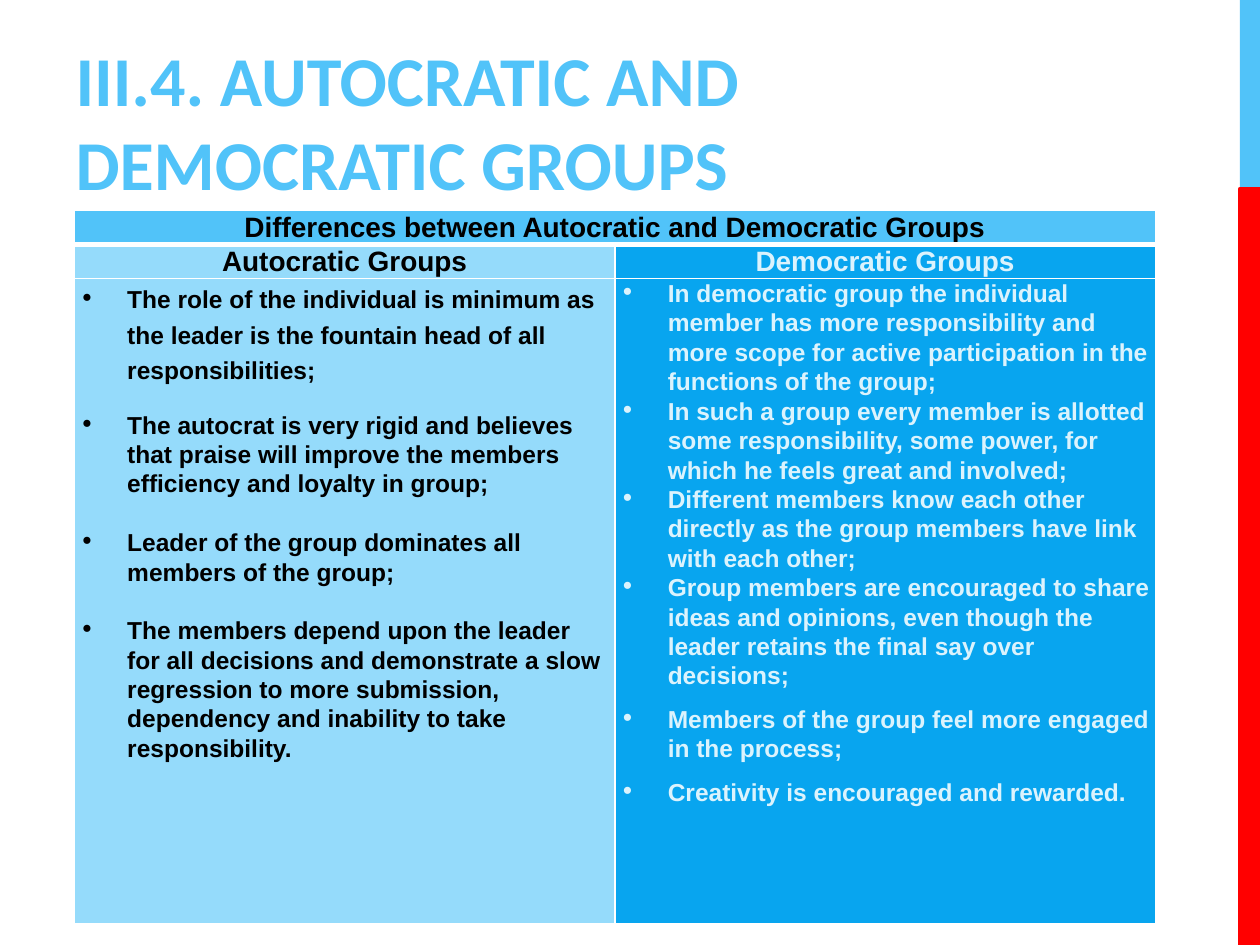
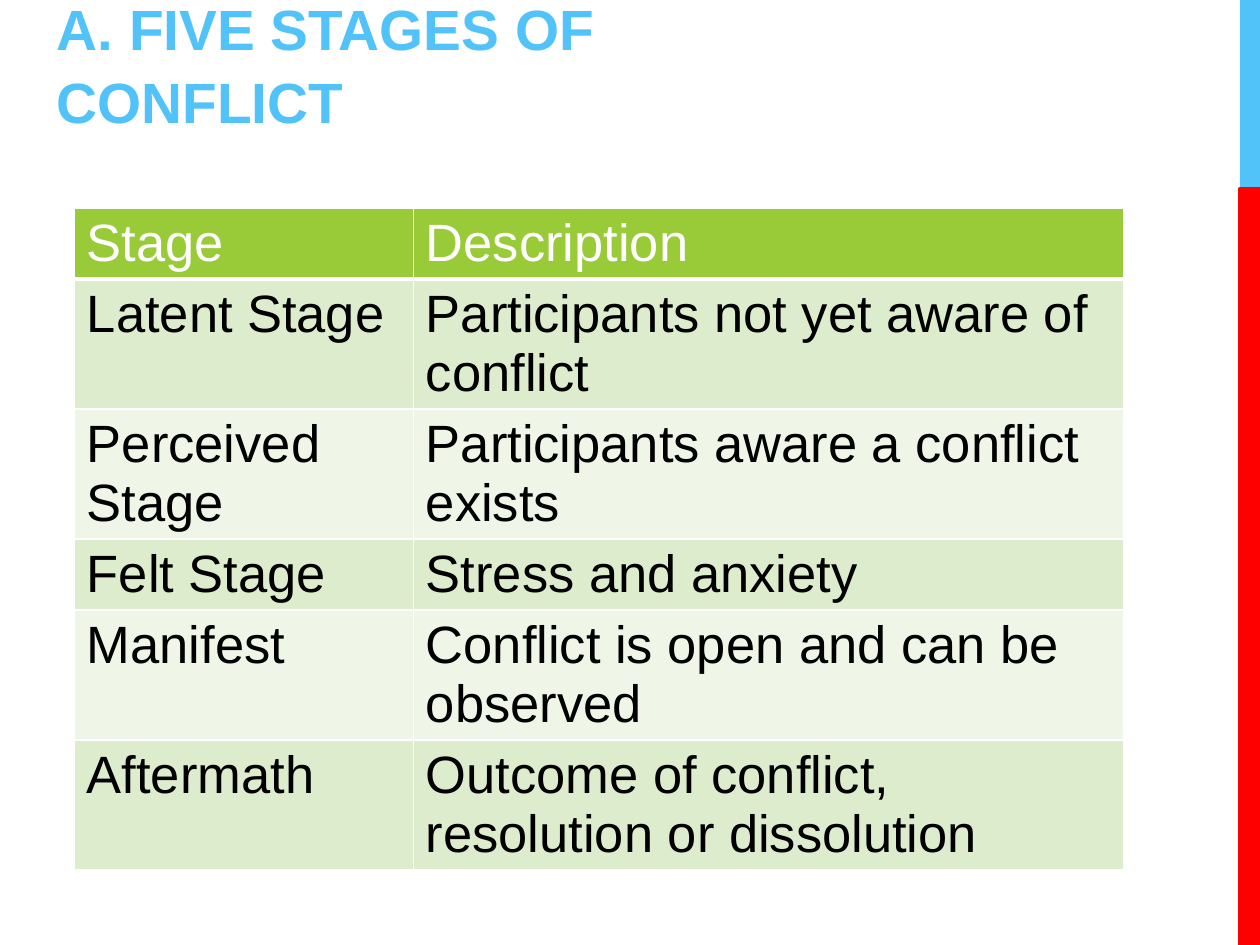
from dataclasses import dataclass

from lxml import etree
from pptx import Presentation
from pptx.dml.color import RGBColor
from pptx.enum.shapes import MSO_SHAPE
from pptx.enum.text import MSO_ANCHOR, MSO_AUTO_SIZE, PP_ALIGN
from pptx.oxml.ns import qn
from pptx.util import Inches, Pt

RECT = MSO_SHAPE.RECTANGLE
BOTTOM, TOP = MSO_ANCHOR.BOTTOM, MSO_ANCHOR.TOP
NO_FIT = MSO_AUTO_SIZE.NONE
LEFT, CENTER = PP_ALIGN.LEFT, PP_ALIGN.CENTER
TITLE_ONLY = 5


@dataclass(frozen=True)
class Theme:
    sky: str = "51C3F9"
    red: str = "FF0000"
    white: str = "FFFFFF"
    black: str = "000000"
    pale: str = "95DBFB"
    deep: str = "08A5EF"
    ice: str = "DBF3FD"
    green: str = "99CB38"
    bands: tuple = ("DDECCC", "EFF6E7")
    head: str = "Calibri"
    body: str = "Arial"
    big: float = 40
    mid: float = 32.4
    grid: float = 30
    label: float = 16
    point: float = 14
    tight: float = 1.07
    loose: float = 1.29
    thin: float = 1
    thick: float = 3


T = Theme()

# Each point: text, space before, line spacing
AUTO = [
    ("The role of the individual is minimum as the leader is the fountain "
     "head of all responsibilities;", 0, T.loose),
    ("The autocrat is very rigid and believes that praise will improve the "
     "members efficiency and loyalty in group;", 14.4, T.tight),
    ("Leader of the group dominates all members of the group;",
     16.7, T.tight),
    ("The members depend upon the leader for all decisions and demonstrate "
     "a slow regression to more submission, dependency and inability to "
     "take responsibility.", 16.7, T.tight),
]
DEMO = [
    ("In democratic group the individual member has more responsibility and "
     "more scope for active participation in the functions of the group;",
     0, T.tight),
    ("In such a group every member is allotted some responsibility, some "
     "power, for which he feels great and involved;", 0, T.tight),
    ("Different members know each other directly as the group members have "
     "link with each other;", 0, T.tight),
    ("Group members are encouraged to share ideas and opinions, even though "
     "the leader retains the final say over decisions;", 0, T.tight),
    ("Members of the group feel more engaged in the process;", 8, T.tight),
    ("Creativity is encouraged and rewarded.", 8, T.tight),
]
STAGES = [
    ("Stage", "Description"),
    ("Latent Stage", "Participants not yet aware of conflict"),
    ("Perceived Stage", "Participants aware a conflict exists"),
    ("Felt Stage", "Stress and anxiety"),
    ("Manifest", "Conflict is open and can be observed"),
    ("Aftermath", "Outcome of conflict, resolution or dissolution"),
]


def rgb(code):
    return RGBColor.from_string(code)


def write(par, text, size, color=T.black, font=T.body, bold=True,
          align=LEFT, lines=1.0, before=0):
    par.alignment = align
    par.line_spacing = lines
    par.space_before = Pt(before)
    run = par.add_run()
    run.text = text
    run.font.name = font
    run.font.size = Pt(size)
    run.font.bold = bold
    run.font.color.rgb = rgb(color)


def bullet(par, color):
    props = par._p.get_or_add_pPr()
    props.set("marL", str(Inches(0.38)))
    props.set("indent", str(-Inches(0.38)))
    tint = etree.SubElement(props, qn("a:buClr"))
    etree.SubElement(tint, qn("a:srgbClr"), val=color)
    etree.SubElement(props, qn("a:buChar"), char="∙")


def add_title(slide, text, box, size, font, lines=1.0):
    title = slide.shapes.title
    title.left, title.top, title.width, title.height = map(Inches, box)
    frame = title.text_frame
    frame.auto_size = NO_FIT
    frame.word_wrap = True
    frame.vertical_anchor = BOTTOM
    write(frame.paragraphs[0], text, size, T.sky, font, lines=lines)


def add_bands(slide):
    """Draw the two-colour strip down the right edge."""
    for top, height, color in ((0, 1.5, T.sky), (1.5, 6, T.red)):
        band = slide.shapes.add_shape(
            RECT, Inches(9.84), Inches(top), Inches(0.16), Inches(height))
        band.shadow.inherit = False
        band.fill.solid()
        band.fill.fore_color.rgb = rgb(color)
        if color == T.red:
            band.line.color.rgb = rgb(color)
            band.line.width = Pt(2.25)
        else:
            band.line.fill.background()


def add_grid(slide, left, top, cols, rows, pad):
    """Add a plain table with white rules, the one under row 0 thick."""
    frame = slide.shapes.add_table(
        len(rows), len(cols), Inches(left), Inches(top),
        Inches(sum(cols)), Inches(sum(rows)))
    table = frame.table
    table.first_row = table.horz_banding = False
    for col, width in zip(table.columns, cols):
        col.width = Inches(width)
    for r, height in enumerate(rows):
        table.rows[r].height = Inches(height)
        for cell in table.rows[r].cells:
            cell.margin_left = cell.margin_right = Inches(pad[0])
            cell.margin_top = cell.margin_bottom = Inches(pad[1])
            cell.vertical_anchor = TOP
            rule(cell, T.thick if r == 1 else T.thin,
                 T.thick if r == 0 else T.thin)
    return table


def rule(cell, above, below):
    props = cell._tc.get_or_add_tcPr()
    widths = {"L": T.thin, "R": T.thin, "T": above, "B": below}
    for side, width in widths.items():
        line = etree.SubElement(props, qn("a:ln" + side), w=str(Pt(width)))
        fill = etree.SubElement(line, qn("a:solidFill"))
        etree.SubElement(fill, qn("a:srgbClr"), val=T.white)


def paint(cell, color):
    cell.fill.solid()
    cell.fill.fore_color.rgb = rgb(color)


def add_label(cell, text, fill, color=T.black):
    paint(cell, fill)
    write(cell.text_frame.paragraphs[0], text, T.label, color,
          align=CENTER, lines=T.tight)


def add_points(cell, points, fill, color):
    paint(cell, fill)
    frame = cell.text_frame
    for i, (text, before, lines) in enumerate(points):
        par = frame.add_paragraph() if i else frame.paragraphs[0]
        bullet(par, color)
        write(par, text, T.point, color, lines=lines, before=before)


def add_groups(slide, left, top):
    table = add_grid(slide, left, top, [4.29] * 2, [0.27, 0.27, 5.12],
                     pad=(0.04, 0))
    table.cell(0, 0).merge(table.cell(0, 1))
    add_label(table.cell(0, 0),
              "Differences between Autocratic and Democratic Groups", T.sky)
    sides = (("Autocratic Groups", AUTO, T.pale, T.black),
             ("Democratic Groups", DEMO, T.deep, T.ice))
    for c, (name, points, fill, color) in enumerate(sides):
        add_label(table.cell(1, c), name, fill, color)
        add_points(table.cell(2, c), points, fill, color)


def add_stages(slide, left, top):
    one, two = 0.56, 1.03
    table = add_grid(slide, left, top, [2.69, 5.64],
                     [one, two, two, one, two, two], pad=(0.1, 0.05))
    for r, texts in enumerate(STAGES):
        fill = T.bands[(r - 1) % 2] if r else T.green
        color = T.black if r else T.white
        for c, text in enumerate(texts):
            cell = table.cell(r, c)
            paint(cell, fill)
            write(cell.text_frame.paragraphs[0], text, T.grid, color,
                  bold=False)


def new_slide(deck):
    slide = deck.slides.add_slide(deck.slide_layouts[TITLE_ONLY])
    add_bands(slide)
    return slide


def main():
    deck = Presentation()
    deck.slide_width, deck.slide_height = Inches(10), Inches(7.5)

    slide = new_slide(deck)
    add_title(slide, "III.4. AUTOCRATIC AND DEMOCRATIC GROUPS",
              (0.5, 0.17, 6.33, 1.5), T.big, T.head)
    add_groups(slide, 0.59, 1.67)

    slide = new_slide(deck)
    add_title(slide, "A. FIVE STAGES OF CONFLICT",
              (0.35, 0.29, 6.78, 0.83), T.mid, T.body, lines=T.tight)
    add_stages(slide, 0.59, 1.65)

    deck.save("out.pptx")


if __name__ == "__main__":
    main()
